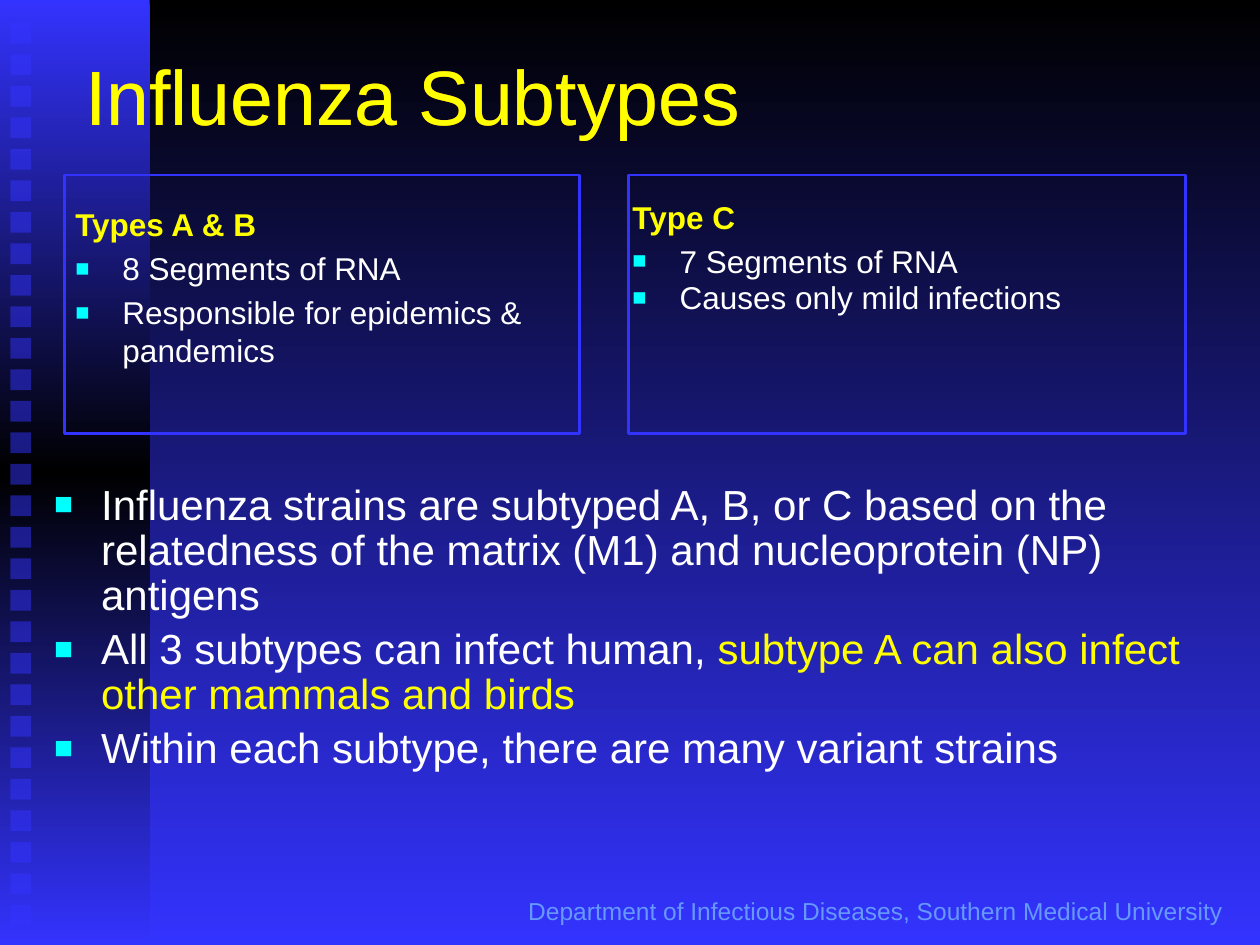
"""Build the slide on influenza subtypes."""
from copy import deepcopy

from pptx import Presentation
from pptx.dml.color import RGBColor as Rgb
from pptx.enum.shapes import MSO_SHAPE as Preset
from pptx.enum.text import MSO_ANCHOR as Anchor, PP_ALIGN as Align
from pptx.oxml.ns import qn
from pptx.util import Cm, Pt
from lxml.etree import SubElement

THEME = {
    "font": "Arial",
    "black": "000000", "blue": "3333FF", "white": "FFFFFF", "yellow": "FFFF00",
    "orange": "FF9900", "cyan": "00FFFF", "pale": "6699FF",
    "title": 44, "body": 24, "type": 18, "footer": 14, "border": 1.5,
}

TITLE = "Influenza Subtypes"
FOOTER = "Department of Infectious Diseases, Southern Medical University"
TYPES = [
    {"heading": "Types A & B", "heading_spacing": 1,
     "facts": [("8 Segments of RNA", 1),
               ("Responsible for epidemics & pandemics", 1)],
     "text_box": (1.27, 4.01, 11.23, 8.46), "frame": (1.3, 3.53, 10.39, 5.21)},
    {"heading": "Type C", "heading_spacing": 0.8,
     "facts": [("7 Segments of RNA", 1),
               ("Causes only mild infections", 0.8)],
     "text_box": (12.5, 4.01, 11.86, 8.26), "frame": (12.67, 3.53, 11.23, 5.21)},
]
POINTS = [
    [("Influenza strains are subtyped A, B, or C based on the relatedness of "
      "the matrix (M1) and nucleoprotein (NP) antigens", "white")],
    [("All 3 subtypes can infect human, ", "white"),
     ("subtype A can also infect other mammals and birds", "yellow")],
    [("Within each subtype, there are many variant strains", "white")],
]

WIDTH, HEIGHT = 25.4, 19.05
TITLE_BOX = (1.47, 0.64, 22.86, 2.54)
POINTS_BOX = (0.84, 9.63, 24.13, 6.71)
FOOTER_BOX = (10.11, 17.93, 15.09, 0.91)
BAND = (0, 0, 3.02, HEIGHT)
SQUARES, SQUARE_LEFT, SQUARE_SIDE = 29, 0.21, 0.42
FIRST_TOP, LAST_TOP = 0.46, 18.24
INDENT = 0.95


def color(name):
    return Rgb.from_string(THEME[name])


def paint_gradient(fill, names):
    fill.gradient()
    fill.gradient_angle = 270
    first = fill.gradient_stops[0]._gs
    for _ in names[2:]:
        first.addnext(deepcopy(first))
    for index, (stop, name) in enumerate(zip(fill.gradient_stops, names)):
        stop.position = index / (len(names) - 1)
        stop.color.rgb = color(name)


def add_rectangle(slide, box):
    rectangle = slide.shapes.add_shape(Preset.RECTANGLE, *map(Cm, box))
    rectangle.shadow.inherit = False
    rectangle.line.fill.background()
    return rectangle


def add_text_frame(slide, box, anchor=Anchor.TOP):
    frame = slide.shapes.add_textbox(*map(Cm, box)).text_frame
    frame.word_wrap = True
    frame.vertical_anchor = anchor
    return frame


def write(frame, parts, size, spacing=1, before=0.2, bold=False, bullet=False):
    paragraph = frame.paragraphs[0]
    if paragraph.runs:
        paragraph = frame.add_paragraph()
    font = paragraph.font
    font.name, font.size, font.bold = THEME["font"], Pt(THEME[size]), bold
    paragraph.line_spacing = spacing
    paragraph.space_before = Pt(THEME[size] * before)
    if bullet:
        add_bullet(paragraph)
    for words, name in parts:
        run = paragraph.add_run()
        run.text = words
        if len(parts) > 1:
            run.font.color.rgb = color(name)
        else:
            font.color.rgb = color(name)
    return paragraph


def add_bullet(paragraph):
    properties = paragraph._p.get_or_add_pPr()
    properties.set("marL", str(Cm(INDENT)))
    properties.set("indent", str(-Cm(INDENT)))
    marks = [SubElement(properties, qn(tag))
             for tag in ("a:buClr", "a:buSzPct", "a:buFont", "a:buChar")]
    SubElement(marks[0], qn("a:srgbClr"), val=THEME["cyan"])
    marks[1].set("val", "75000")
    marks[2].set("typeface", THEME["font"])
    marks[3].set("char", "■")
    default_font = properties.find(qn("a:defRPr"))
    if default_font is not None:
        properties.append(default_font)


def add_side_band(slide):
    paint_gradient(add_rectangle(slide, BAND).fill, ["blue", "black", "blue"])
    pitch = (LAST_TOP - FIRST_TOP) / (SQUARES - 1)
    for index in range(SQUARES):
        top = FIRST_TOP + index * pitch
        square = add_rectangle(slide, (SQUARE_LEFT, top, SQUARE_SIDE, SQUARE_SIDE))
        square.fill.solid()
        square.fill.fore_color.rgb = color("blue")
        tint = next(square._element.spPr.iter(qn("a:srgbClr")))
        SubElement(tint, qn("a:alpha"), val="50000")


def main():
    deck = Presentation()
    deck.slide_width, deck.slide_height = Cm(WIDTH), Cm(HEIGHT)
    slide = deck.slides.add_slide(deck.slide_layouts[6])
    paint_gradient(slide.background.fill, ["black", "blue"])
    add_side_band(slide)

    footer = write(add_text_frame(slide, FOOTER_BOX), [(FOOTER, "pale")], "footer")
    footer.alignment = Align.CENTER
    for name in ("orange", "yellow"):
        title = add_text_frame(slide, TITLE_BOX, Anchor.MIDDLE)
        write(title, [(TITLE, name)], "title", before=0)

    for group in TYPES:
        text = add_text_frame(slide, group["text_box"])
        write(text, [(group["heading"], "yellow")], "type",
              group["heading_spacing"], bold=True)
        for fact, spacing in group["facts"]:
            write(text, [(fact, "white")], "type", spacing, bullet=True)

    points = add_text_frame(slide, POINTS_BOX)
    for parts in POINTS:
        write(points, parts, "body", 0.9, bullet=True)

    for group in TYPES:
        border = add_rectangle(slide, group["frame"])
        border.fill.background()
        border.line.color.rgb = color("blue")
        border.line.width = Pt(THEME["border"])

    deck.save("out.pptx")


if __name__ == "__main__":
    main()
